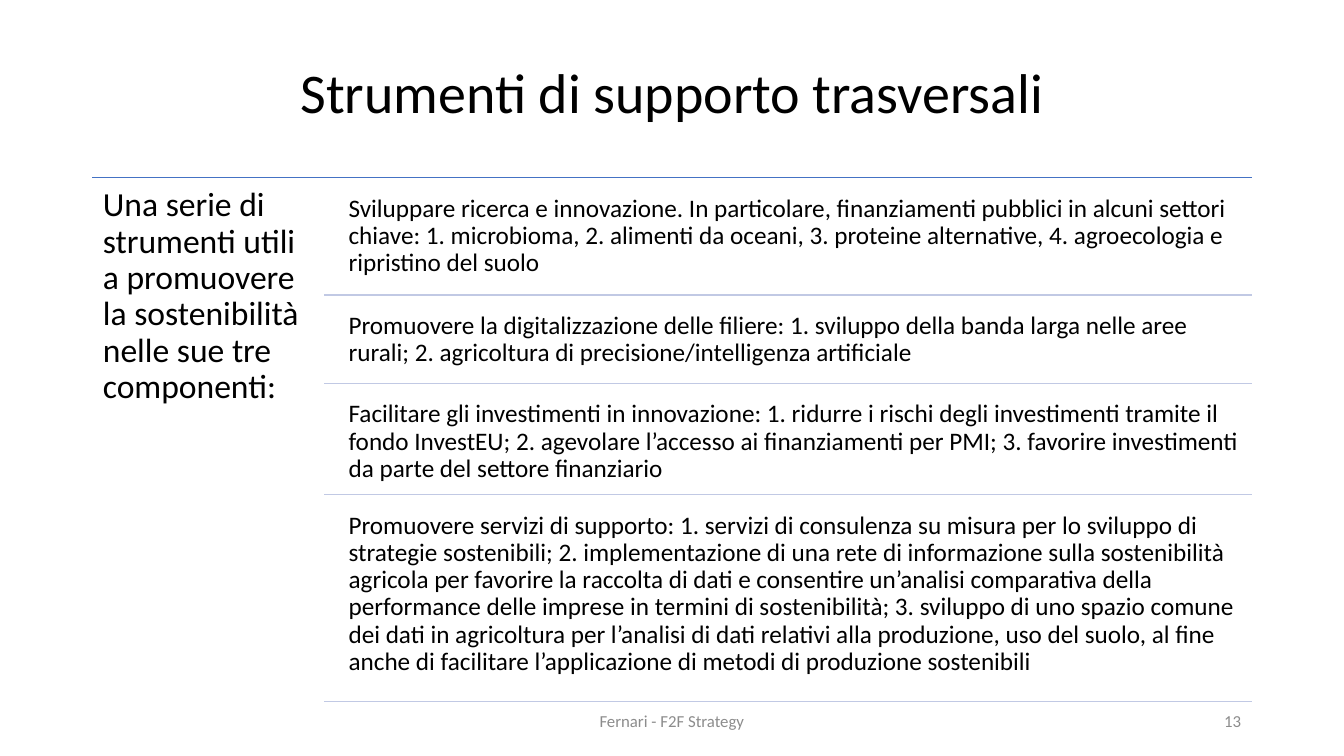
from pptx import Presentation
from pptx.dml.color import RGBColor
from pptx.enum.shapes import MSO_CONNECTOR
from pptx.enum.text import MSO_ANCHOR, PP_ALIGN
from pptx.oxml.ns import qn
from pptx.util import Pt
from lxml.etree import SubElement

TITLE = "Strumenti di supporto trasversali"
INTRO = "Una serie di strumenti utili a promuovere la sostenibilità nelle sue tre componenti:"
TOOLS = [
    ("Sviluppare ricerca e innovazione. In particolare, finanziamenti pubblici in alcuni "
     "settori chiave: 1. microbioma, 2. alimenti da oceani, 3. proteine alternative, "
     "4. agroecologia e ripristino del suolo", 112),
    ("Promuovere la digitalizzazione delle filiere: 1. sviluppo della banda larga nelle aree "
     "rurali; 2. agricoltura di precisione/intelligenza artificiale", 84),
    ("Facilitare gli investimenti in innovazione: 1. ridurre i rischi degli investimenti "
     "tramite il fondo InvestEU; 2. agevolare l’accesso ai finanziamenti per PMI; "
     "3. favorire investimenti da parte del settore finanziario", 106),
    ("Promuovere servizi di supporto: 1. servizi di consulenza su misura per lo sviluppo di "
     "strategie sostenibili; 2. implementazione di una rete di informazione sulla "
     "sostenibilità agricola per favorire la raccolta di dati e consentire un’analisi "
     "comparativa della performance delle imprese in termini di sostenibilità; 3. sviluppo "
     "di uno spazio comune dei dati in agricoltura per l’analisi di dati relativi alla "
     "produzione, uso del suolo, al fine anche di facilitare l’applicazione di metodi di "
     "produzione sostenibili", 197),
]
FOOTER = "Fernari - F2F Strategy"
PAGE = "13"

WIDTH, HEIGHT = 1280, 720
LEFT, RIGHT = 88, 1192
TOP = 169
RULE_LEFT, TOOL_LEFT = 309, 325
ROW_GAP = 10
FOOTER_TOP, FOOTER_HEIGHT = 667, 38
BLACK, GREY, BLUE, PALE_BLUE = "000000", "8C8C8C", "4472C4", "C1C9E4"


def px(length):
    return length * 9525


def color(value):
    return RGBColor.from_string(value)


def add_text(text, left, top, width, height, size, fill=BLACK, align=PP_ALIGN.LEFT,
             anchor=MSO_ANCHOR.TOP, spacing=0.9, inset=(10, 5)):
    frame = slide.shapes.add_textbox(px(left), px(top), px(width), px(height)).text_frame
    frame.word_wrap = True
    frame.vertical_anchor = anchor
    frame.margin_left = frame.margin_right = px(inset[0])
    frame.margin_top = frame.margin_bottom = px(inset[1])
    frame.text = text
    paragraph = frame.paragraphs[0]
    paragraph.alignment = align
    paragraph.line_spacing = spacing
    font = paragraph.runs[0].font
    font.name = "Calibri"
    font.size = Pt(size)
    font.color.rgb = color(fill)


def add_rule(left, y, stroke):
    rule = slide.shapes.add_connector(MSO_CONNECTOR.STRAIGHT, px(left), px(y), px(RIGHT), px(y))
    rule.line.color.rgb = color(stroke)
    rule.line.width = Pt(1)
    SubElement(rule._element.spPr, qn("a:effectLst"))


deck = Presentation()
deck.slide_width, deck.slide_height = px(WIDTH), px(HEIGHT)
slide = deck.slides.add_slide(deck.slide_layouts[6])

add_text(TITLE, LEFT, 38, RIGHT - LEFT, 106, 40, align=PP_ALIGN.CENTER, anchor=MSO_ANCHOR.MIDDLE)
add_rule(LEFT, TOP, BLUE)
add_text(INTRO, LEFT, TOP, RULE_LEFT - LEFT, 509, 24, inset=(10, 10))

row_top = TOP
for tool, row_height in TOOLS:
    add_text(tool, TOOL_LEFT, row_top + ROW_GAP, RIGHT - TOOL_LEFT, row_height - ROW_GAP, 18,
             inset=(7, 7))
    row_top += row_height
    add_rule(RULE_LEFT, row_top, PALE_BLUE)

for label, width, left, align in [
    (FOOTER, 432, (WIDTH - 432) // 2, PP_ALIGN.CENTER),
    (PAGE, 288, RIGHT - 288, PP_ALIGN.RIGHT),
]:
    add_text(label, left, FOOTER_TOP, width, FOOTER_HEIGHT, 12, GREY, align,
             MSO_ANCHOR.MIDDLE, spacing=1.0)

deck.save("out.pptx")
